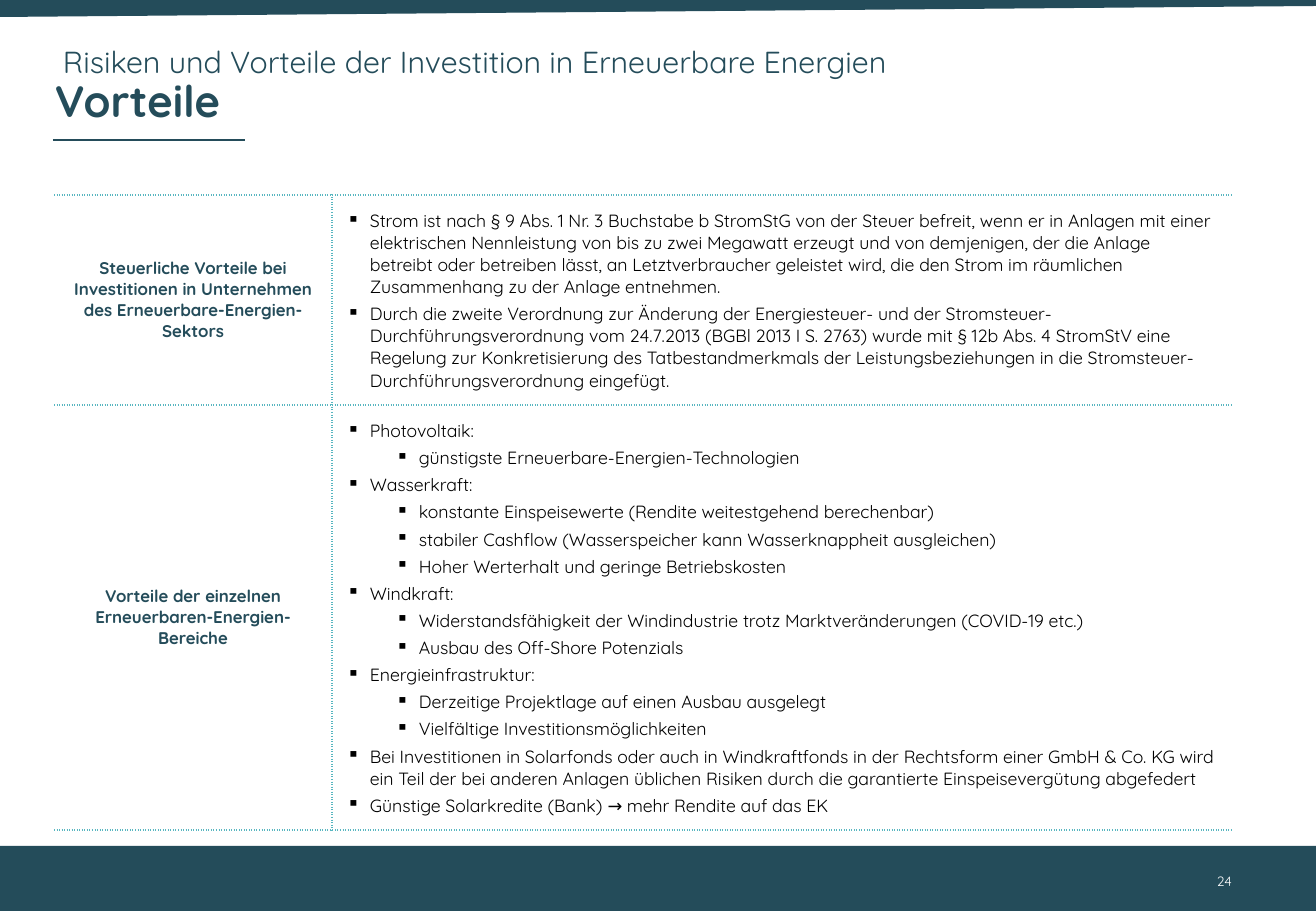
import pptx
import pptx.util
import pptx.dml.color
import pptx.enum.shapes
import pptx.enum.text
import pptx.oxml
import pptx.oxml.ns
import lxml.etree

PX = 7526
WIDTH, HEIGHT = 1316, 911
ALIGN = pptx.enum.text.PP_ALIGN
MIDDLE = pptx.enum.text.MSO_ANCHOR.MIDDLE

THEME = {
    "font": "Quicksand",
    "petrol": "244C5A",
    "teal": "58B6C0",
    "black": "000000",
    "white": "FFFFFF",
    "topic_size": 18,
    "heading_size": 26,
    "label_size": 10,
    "body_size": 10.5,
    "number_size": 8,
}

BENEFITS = [
    (
        210,
        "Steuerliche Vorteile bei Investitionen in Unternehmen des Erneuerbare-Energien-Sektors",
        [
            (0, "Strom ist nach § 9 Abs. 1 Nr. 3 Buchstabe b StromStG von der Steuer befreit, wenn er in Anlagen "
                "mit einer elektrischen Nennleistung von bis zu zwei Megawatt erzeugt und von demjenigen, der die "
                "Anlage betreibt oder betreiben lässt, an Letztverbraucher geleistet wird, die den Strom im "
                "räumlichen Zusammenhang zu der Anlage entnehmen."),
            (0, "Durch die zweite Verordnung zur Änderung der Energiesteuer- und der "
                "Stromsteuer-Durchführungsverordnung vom 24.7.2013 (BGBl 2013 I S. 2763) wurde mit § 12b Abs. 4 "
                "StromStV eine Regelung zur Konkretisierung des Tatbestandmerkmals der Leistungsbeziehungen in die "
                "Stromsteuer-Durchführungsverordnung eingefügt."),
        ],
    ),
    (
        425,
        "Vorteile der einzelnen Erneuerbaren-Energien-Bereiche",
        [
            (0, "Photovoltaik:"),
            (1, "günstigste Erneuerbare-Energien-Technologien"),
            (0, "Wasserkraft:"),
            (1, "konstante Einspeisewerte (Rendite weitestgehend berechenbar)"),
            (1, "stabiler Cashflow (Wasserspeicher kann Wasserknappheit ausgleichen)"),
            (1, "Hoher Werterhalt und geringe Betriebskosten"),
            (0, "Windkraft:"),
            (1, "Widerstandsfähigkeit der Windindustrie trotz Marktveränderungen (COVID-19 etc.)"),
            (1, "Ausbau des Off-Shore Potenzials"),
            (0, "Energieinfrastruktur:"),
            (1, "Derzeitige Projektlage auf einen Ausbau ausgelegt"),
            (1, "Vielfältige Investitionsmöglichkeiten"),
            (0, "Bei Investitionen in Solarfonds oder auch in Windkraftfonds in der Rechtsform einer GmbH & Co. KG "
                "wird ein Teil der bei anderen Anlagen üblichen Risiken durch die garantierte Einspeisevergütung "
                "abgefedert"),
            (0, "Günstige Solarkredite (Bank) → mehr Rendite auf das EK"),
        ],
    ),
]


def style_font(paragraph, size, color, bold=False):
    font = paragraph.font
    font.name = THEME["font"]
    font.size = pptx.util.Pt(THEME[size])
    font.bold = bold
    font.color.rgb = pptx.dml.color.RGBColor.from_string(THEME[color])


def border_xml(side, visible):
    line = (
        f'<a:solidFill><a:srgbClr val="{THEME["teal"]}"/></a:solidFill><a:prstDash val="sysDot"/>'
        if visible else "<a:noFill/>"
    )
    return pptx.oxml.parse_xml(
        f'<a:ln{side} {pptx.oxml.ns.nsdecls("a")} w="12700">{line}</a:ln{side}>'
    )


presentation = pptx.Presentation()
presentation.slide_width = WIDTH * PX
presentation.slide_height = HEIGHT * PX
slide = presentation.slides.add_slide(presentation.slide_layouts[6])
shapes = slide.shapes
petrol = pptx.dml.color.RGBColor.from_string(THEME["petrol"])

outline = shapes.build_freeform(0, 0, scale=PX)
outline.add_line_segments([(WIDTH, 0), (WIDTH, 6), (0, 17)], close=True)
top_wedge = outline.convert_to_shape()
footer_band = shapes.add_shape(
    pptx.enum.shapes.MSO_SHAPE.RECTANGLE, 0, 846 * PX, WIDTH * PX, 65 * PX
)
for band in (top_wedge, footer_band):
    band.shadow.inherit = False
    band.fill.solid()
    band.fill.fore_color.rgb = petrol
    band.line.fill.background()

title_rule = shapes.add_connector(
    pptx.enum.shapes.MSO_CONNECTOR.STRAIGHT, 53 * PX, 140 * PX, 245 * PX, 140 * PX
)
title_rule.line.color.rgb = petrol
title_rule.line.width = pptx.util.Pt(1.5)
lxml.etree.SubElement(title_rule._element.spPr, pptx.oxml.ns.qn("a:effectLst"))

title = shapes.add_textbox(55 * PX, 47 * PX, 1190 * PX, 81 * PX).text_frame
title.word_wrap = True
title.margin_left = title.margin_right = title.margin_top = title.margin_bottom = 0
topic = title.paragraphs[0]
topic.text = "Risiken und Vorteile der Investition in Erneuerbare Energien"
topic._p.get_or_add_pPr().set("marL", str(8 * PX))
heading = title.add_paragraph()
heading.text = "Vorteile"
for title_line, size, bold in ((topic, "topic_size", False), (heading, "heading_size", True)):
    title_line.line_spacing = 0.9
    style_font(title_line, size, "petrol", bold)

number_frame = shapes.add_textbox(1194 * PX, 857 * PX, 50 * PX, 48 * PX).text_frame
number_frame.word_wrap = True
number_frame.vertical_anchor = MIDDLE
page_number = number_frame.paragraphs[0]
page_number.text = "24"
page_number.alignment = ALIGN.RIGHT
style_font(page_number, "number_size", "white")

benefit_table = shapes.add_table(2, 2, 54 * PX, 195 * PX, 1178 * PX, 635 * PX).table
benefit_table.first_row = False
benefit_table.horz_banding = False
for column, width in zip(benefit_table.columns, (278, 900)):
    column.width = width * PX

for row, (height, label_text, points) in enumerate(BENEFITS):
    benefit_table.rows[row].height = height * PX
    label_cell, points_cell = benefit_table.cell(row, 0), benefit_table.cell(row, 1)

    for cell, visible_sides in ((label_cell, "RTB"), (points_cell, "LTB")):
        cell.vertical_anchor = MIDDLE
        cell.margin_left = cell.margin_right = cell.margin_top = cell.margin_bottom = 15 * PX
        cell_properties = cell._tc.get_or_add_tcPr()
        for side in "LRTB":
            cell_properties.append(border_xml(side, side in visible_sides))
        cell.fill.background()

    label = label_cell.text_frame.paragraphs[0]
    label.text = label_text
    label.alignment = ALIGN.CENTER
    style_font(label, "label_size", "petrol", True)

    points_frame = points_cell.text_frame
    for index, (level, point_text) in enumerate(points):
        point = points_frame.add_paragraph() if index else points_frame.paragraphs[0]
        point.text = point_text
        point.level = level
        point_properties = point._p.get_or_add_pPr()
        point_properties.set("marL", str((23 + 49 * level) * PX))
        point_properties.set("indent", str(-23 * PX))
        lxml.etree.SubElement(point_properties, pptx.oxml.ns.qn("a:buChar")).set("char", "▪")
        if index:
            point.space_before = pptx.util.Pt(3)
        style_font(point, "body_size", "black")

presentation.save("out.pptx")
